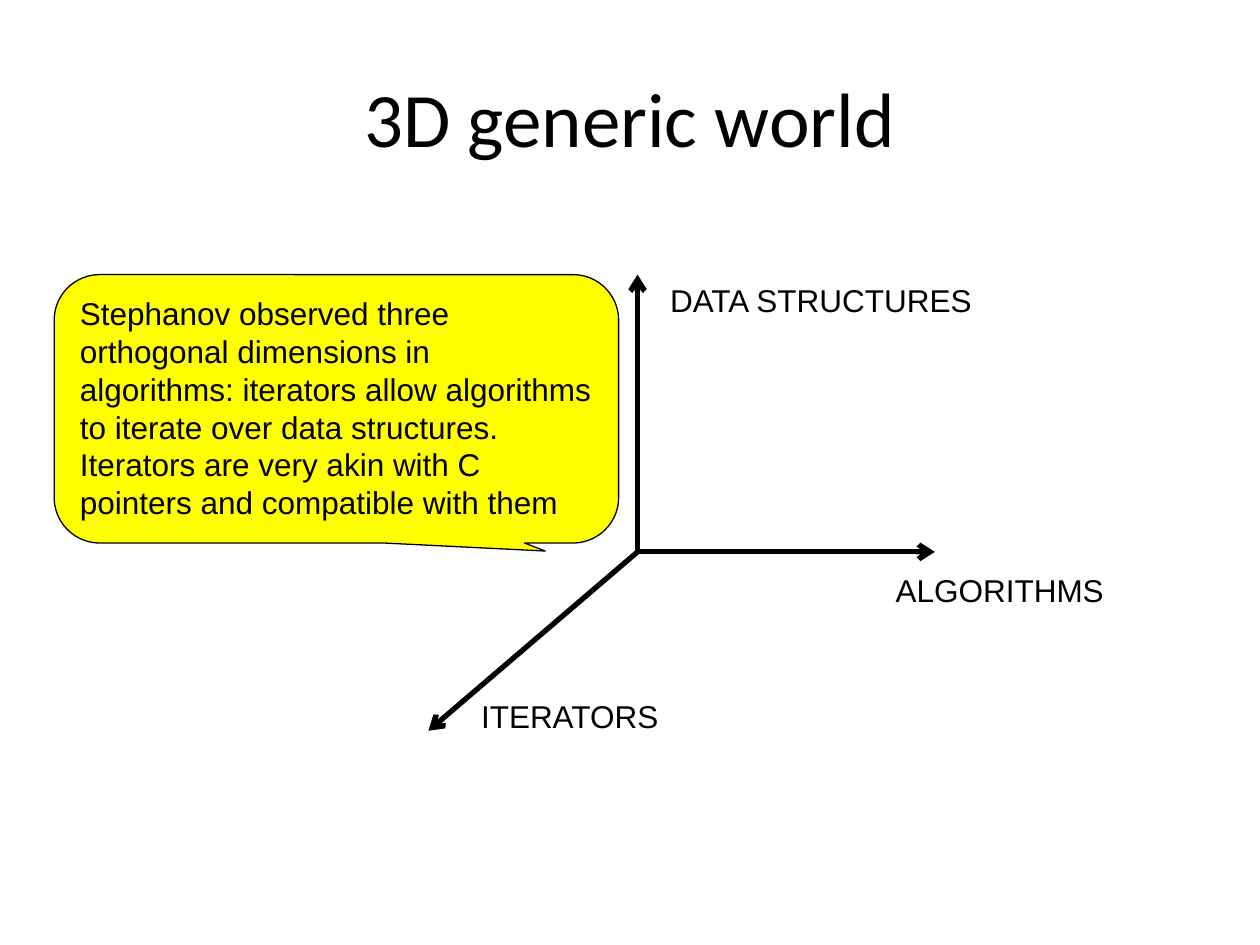
from dataclasses import dataclass

from lxml.etree import SubElement
from pptx import Presentation
from pptx.dml.color import RGBColor
from pptx.enum.shapes import MSO_CONNECTOR as Connector, MSO_SHAPE as Shape
from pptx.enum.text import MSO_ANCHOR as Anchor, MSO_AUTO_SIZE as AutoSize, PP_ALIGN as Align
from pptx.oxml.ns import qn
from pptx.slide import Slide
from pptx.util import Inches, Pt


def color(hex_code):
    return RGBColor.from_string(hex_code)


@dataclass
class Diagram:
    """Draws titles, axes, labels and callouts on one slide in a shared style."""

    slide: Slide
    ink: str = "000000"
    highlight: str = "FFFF00"
    title_font: str = "Calibri"
    body_font: str = "Arial"
    title_size: int = 44
    body_size: int = 18

    def add_run(self, paragraph, text, font, size, align=Align.LEFT):
        paragraph.alignment = align
        run = paragraph.add_run()
        run.text = text
        run.font.name = font
        run.font.size = Pt(size)
        run.font.color.rgb = color(self.ink)

    def add_text_box(self, left, top, width, height):
        box = self.slide.shapes.add_textbox(*map(Inches, (left, top, width, height)))
        return box.text_frame

    def add_title(self, text, *bounds):
        frame = self.add_text_box(*bounds)
        frame.word_wrap = True
        frame.vertical_anchor = Anchor.MIDDLE
        self.add_run(frame.paragraphs[0], text, self.title_font, self.title_size, Align.CENTER)

    def add_label(self, text, left, top, width):
        frame = self.add_text_box(left, top, width, 0.4)
        frame.word_wrap = False
        frame.auto_size = AutoSize.SHAPE_TO_FIT_TEXT
        self.add_run(frame.paragraphs[0], text, self.body_font, self.body_size)

    def add_axis(self, origin, end):
        axis = self.slide.shapes.add_connector(Connector.STRAIGHT, *map(Inches, origin + end))
        axis.line.color.rgb = color(self.ink)
        axis.line.width = Pt(3)
        properties = axis._element.spPr
        SubElement(properties.find(qn("a:ln")), qn("a:tailEnd"), type="arrow")
        SubElement(properties, qn("a:effectLst"))

    def add_callout(self, texts, bounds, adjustments):
        shape = self.slide.shapes.add_shape(Shape.ROUNDED_RECTANGULAR_CALLOUT, *map(Inches, bounds))
        for index, value in enumerate(adjustments):
            shape.adjustments[index] = value
        shape.shadow.inherit = False
        shape.fill.solid()
        shape.fill.fore_color.rgb = color(self.highlight)
        shape.line.color.rgb = color(self.ink)
        shape.line.width = Pt(0.75)
        frame = shape.text_frame
        frame.word_wrap = True
        frame.vertical_anchor = Anchor.TOP
        for index, text in enumerate(texts):
            paragraph = frame.add_paragraph() if index else frame.paragraphs[0]
            self.add_run(paragraph, text, self.body_font, self.body_size)


def main():
    presentation = Presentation()
    presentation.slide_width = Inches(10)
    presentation.slide_height = Inches(7.5)
    diagram = Diagram(presentation.slides.add_slide(presentation.slide_layouts[6]))

    diagram.add_title("3D generic world", 0.5, 0.3, 9, 1.25)
    origin = (5.06, 4.38)
    for end in ((3.4, 5.8), (7.42, 4.38)):
        diagram.add_axis(origin, end)
    for label in (
        ("ALGORITHMS", 7.01, 4.48, 1.85),
        ("DATA STRUCTURES", 5.22, 2.18, 2.65),
        ("ITERATORS", 3.72, 5.48, 1.63),
    ):
        diagram.add_label(*label)
    diagram.add_callout(
        (
            "Stephanov observed three orthogonal dimensions in algorithms: "
            "iterators allow algorithms to iterate over data structures.",
            "Iterators are very akin with C pointers and compatible with them",
        ),
        (0.43, 2.18, 4.48, 2.13),
        (0.37, 0.53, 0.17),
    )
    diagram.add_axis(origin, (5.06, 2.18))
    presentation.save("out.pptx")


if __name__ == "__main__":
    main()
